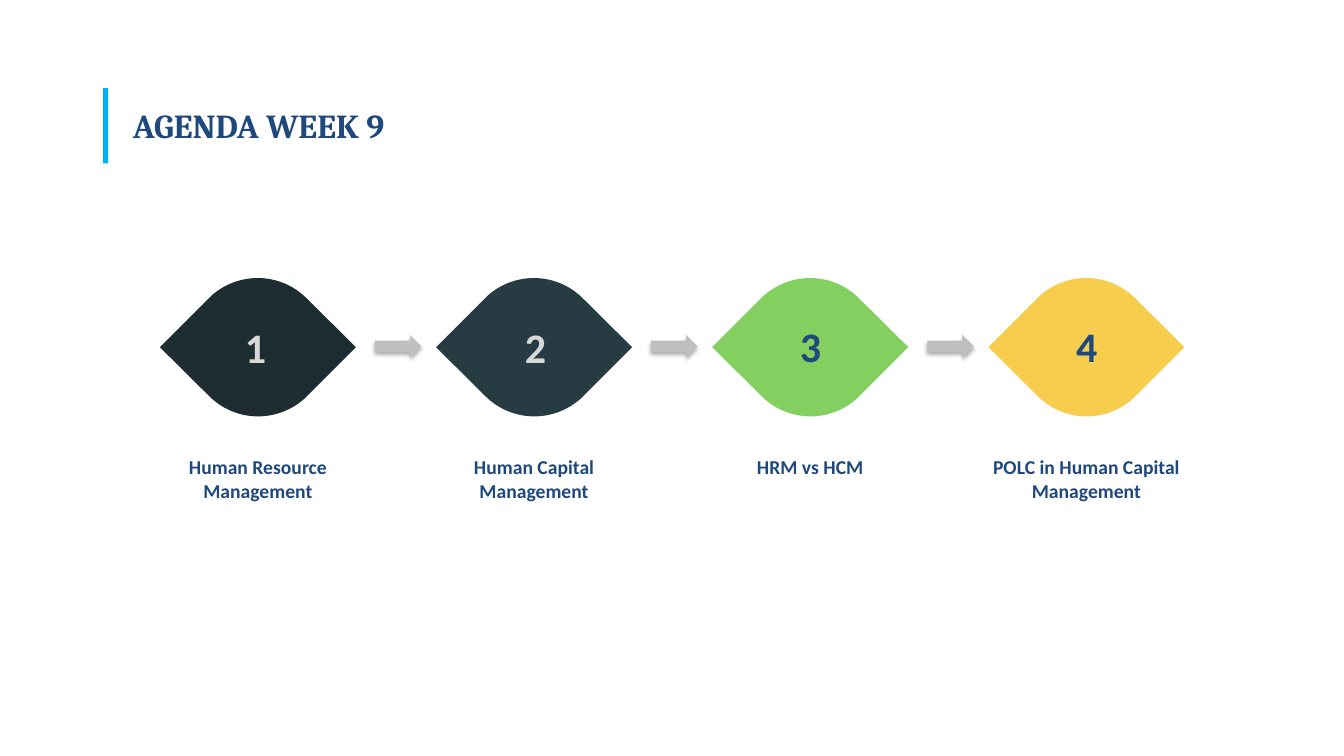
from lxml import etree
from pptx import Presentation
from pptx.dml.color import RGBColor
from pptx.enum import shapes, text
from pptx.oxml import ns
from pptx.util import Cm, Pt

COLORS = {
    "navy": "1F497D", "accent": "00B0F0", "light": "D8D8D8", "arrow": "BFBFBF",
    "dark": "1E2D31", "slate": "273C42", "green": "83D061", "yellow": "F6CD4C",
    "shadow": "000000",
}
# Label, label height, leaf colour, number colour, number left and top
STEPS = [
    ("Human Resource Management", 1.45, "dark", "light", 5.92, 7.98),
    ("Human Capital Management", 1.45, "slate", "light", 12.98, 7.98),
    ("HRM vs HCM", 0.86, "green", "navy", 19.91, 7.95),
    ("POLC in Human Capital Management", 1.45, "yellow", "navy", 26.87, 7.95),
]


def paint(shape, color):
    shape.shadow.inherit = False
    shape.fill.solid()
    shape.fill.fore_color.rgb = RGBColor.from_string(COLORS[color])
    shape.line.fill.background()


def add_text(left, top, width, height, words, font, size, color):
    box = slide.shapes.add_textbox(Cm(left), Cm(top), Cm(width), Cm(height))
    box.text_frame.word_wrap = True
    box.text_frame.auto_size = text.MSO_AUTO_SIZE.SHAPE_TO_FIT_TEXT
    box.text_frame.text = words
    paragraph = box.text_frame.paragraphs[0]
    run_font = paragraph.runs[0].font
    run_font.name, run_font.size, run_font.bold = font, Pt(size), True
    run_font.color.rgb = RGBColor.from_string(COLORS[color])
    return paragraph


presentation = Presentation()
presentation.slide_width, presentation.slide_height = Cm(33.87), Cm(19.05)
slide = presentation.slides.add_slide(presentation.slide_layouts[6])

# Title with accent bar
bar = slide.shapes.add_shape(shapes.MSO_SHAPE.RECTANGLE, Cm(2.6), Cm(2.22), Cm(0.13), Cm(1.9))
paint(bar, "accent")
add_text(3.1, 2.51, 10.36, 1.28, "AGENDA WEEK 9", "Cambria", 24, "navy")

# Leaf around its centre: a curve and a tip, then the same turned by 180 degrees
half = [(1.22, -1.24), (0.56, -1.89), (-0.48, -1.91), (-1.17, -1.3), (-2.47, 0)]
leaf_outline = half + [(-x, -y) for x, y in half]
CURVE_STARTS = (0, 5)

# Steps: leaf, number, label, and an arrow to the next step
FIRST_X, PITCH, MIDDLE_Y = 6.5, 6.96, 8.75
LABEL_WIDTH = 5.88
for index, (label, label_height, fill, number_color, number_left, number_top) in enumerate(STEPS):
    center = FIRST_X + index * PITCH
    points = [(Cm(center + x), Cm(MIDDLE_Y + y)) for x, y in leaf_outline]
    builder = slide.shapes.build_freeform(*points[0])
    builder.add_line_segments(points[1:], close=True)
    leaf = builder.convert_to_shape()
    paint(leaf, fill)
    # Turn the three lines at each curve start into one Bezier curve
    lines = list(leaf._element.iter(ns.qn("a:lnTo")))
    for start in CURVE_STARTS:
        curve = etree.Element(ns.qn("a:cubicBezTo"))
        lines[start].addprevious(curve)
        for line in lines[start:start + 3]:
            curve.append(line[0])
            line.getparent().remove(line)

    add_text(number_left, number_top, 1.17, 1.55, str(index + 1), "Calibri", 30, number_color)
    paragraph = add_text(center - LABEL_WIDTH / 2, 11.35, LABEL_WIDTH, label_height,
                         label, "Calibri", 14, "navy")
    paragraph.alignment = text.PP_ALIGN.CENTER
    paragraph.space_before = Pt(2.4)

    if index < len(STEPS) - 1:
        arrow = slide.shapes.add_shape(shapes.MSO_SHAPE.RIGHT_ARROW, Cm(center + 2.95),
                                       Cm(8.44), Cm(1.17), Cm(0.58))
        paint(arrow, "arrow")
        # Soft shadow below the arrow
        effects = arrow._element.spPr.find(ns.qn("a:effectLst"))
        shadow = etree.SubElement(effects, ns.qn("a:outerShdw"), blurRad=str(Pt(3.1)),
                                  dist=str(Pt(1.8)), dir="5400000", rotWithShape="0")
        tint = etree.SubElement(shadow, ns.qn("a:srgbClr"), val=COLORS["shadow"])
        etree.SubElement(tint, ns.qn("a:alpha"), val="33000")

presentation.save("out.pptx")
